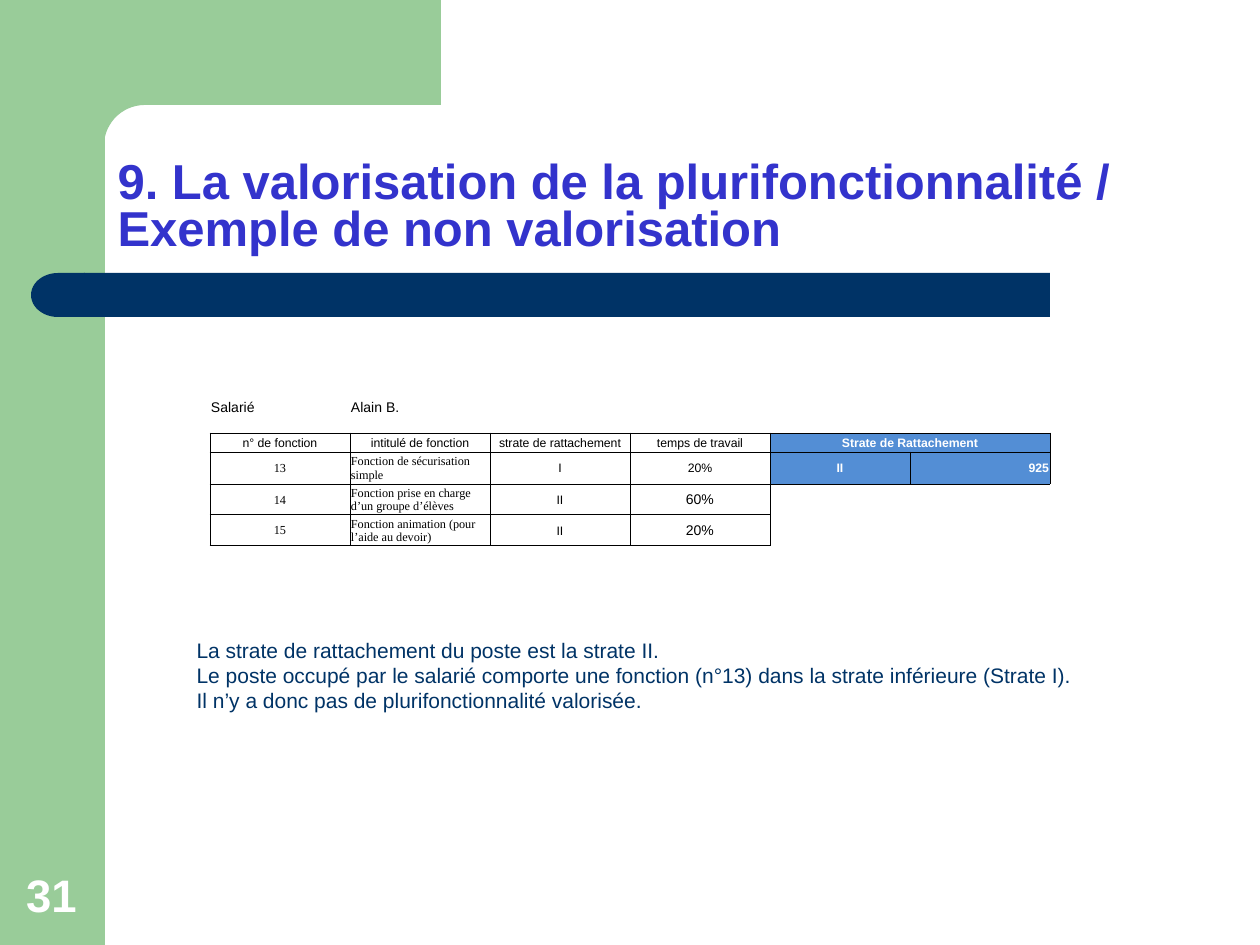
import math
from dataclasses import dataclass

from lxml import etree
from pptx import Presentation
from pptx import util as u
from pptx.dml.color import RGBColor
from pptx.enum import shapes, text
from pptx.oxml.ns import qn

COLORS = {
    "green": "99CC99",
    "navy": "003366",
    "title": "3333CC",
    "blue": "538ED5",
    "white": "FFFFFF",
    "black": "000000",
}
SCALE = 914400 / 126
SERIF = "Times New Roman"
NO_STYLE = "{2D5ABB26-0587-4C30-8999-92F81FD0307C}"
LEFT, CENTER, RIGHT = text.PP_ALIGN.LEFT, text.PP_ALIGN.CENTER, text.PP_ALIGN.RIGHT


def px(length: float) -> u.Emu:
    return u.Emu(round(length * SCALE))


def rgb(name: str) -> RGBColor:
    return RGBColor.from_string(COLORS[name])


@dataclass
class Box:
    left: int
    top: int
    width: int
    height: int

    def emu(self) -> list:
        return [px(n) for n in (self.left, self.top, self.width, self.height)]


@dataclass
class Style:
    size: float
    color: str = "black"
    bold: bool = False
    font: str = "Arial"
    align: text.PP_ALIGN = CENTER


@dataclass
class Entry:
    row: int
    column: int
    wording: str
    style: Style
    fill: str = ""
    bordered: bool = True


def format_text(frame, style: Style) -> None:
    for para in frame.paragraphs:
        para.alignment = style.align
        for span in para.runs:
            span.font.name = style.font
            span.font.size = u.Pt(style.size)
            span.font.bold = style.bold
            span.font.color.rgb = rgb(style.color)


def paint(shape, color: str) -> None:
    shape.shadow.inherit = False
    shape.fill.solid()
    shape.fill.fore_color.rgb = rgb(color)
    shape.line.fill.background()


def add_block(page, kind, box: Box, color: str):
    shape = page.shapes.add_shape(kind, *box.emu())
    paint(shape, color)
    return shape


def add_corner(page) -> None:
    center_x, center_y, radius = 145, 146, 41
    arc = [
        (center_x - radius * math.sin(angle), center_y - radius * math.cos(angle))
        for angle in (math.radians(degrees) for degrees in range(0, 91, 6))
    ]
    outline = [(441, 105), *arc, (105, 161), (63, 161), (63, 0)]
    builder = page.shapes.build_freeform(px(441), 0)
    builder.add_line_segments([(px(x), px(y)) for x, y in outline], close=True)
    paint(builder.convert_to_shape(), "green")


def place_text(shape, box: Box, wording: str, style: Style, anchor) -> None:
    shape.left, shape.top, shape.width, shape.height = box.emu()
    frame = shape.text_frame
    frame.text = wording
    frame.word_wrap = True
    frame.auto_size = text.MSO_AUTO_SIZE.NONE
    frame.vertical_anchor = anchor
    format_text(frame, style)


def remove_bullet(para) -> None:
    properties = para._p.get_or_add_pPr()
    properties.set("marL", "0")
    properties.set("indent", "0")
    etree.SubElement(properties, qn("a:buNone"))


def add_borders(cell) -> None:
    properties = cell._tc.get_or_add_tcPr()
    for index, side in enumerate(("lnL", "lnR", "lnT", "lnB")):
        line = etree.Element(qn(f"a:{side}"), w=str(u.Pt(0.5)))
        fill = etree.SubElement(line, qn("a:solidFill"))
        etree.SubElement(fill, qn("a:srgbClr"), val=COLORS["black"])
        properties.insert(index, line)


def table_entries() -> list[Entry]:
    heading = Style(7)
    serif = Style(7, font=SERIF)
    label = Style(7, font=SERIF, align=LEFT)
    strong = Style(7, "white", True)
    name = Style(8, align=LEFT)
    entries = [
        Entry(0, 0, "Salarié", name, bordered=False),
        Entry(0, 1, "Alain B.", name, bordered=False),
        Entry(2, 4, "Strate de Rattachement", strong, "blue"),
        Entry(2, 5, "", strong, "blue"),
        Entry(3, 4, "II", strong, "blue"),
        Entry(3, 5, "925", Style(7, "white", True, align=RIGHT), "blue"),
    ]
    headings = ("n° de fonction", "intitulé de fonction", "strate de rattachement", "temps de travail")
    entries += [Entry(2, column, wording, heading) for column, wording in enumerate(headings)]
    functions = (
        ("13", "Fonction de sécurisation simple", "I", "20%", 7),
        ("14", "Fonction prise en charge d’un groupe d’élèves", "II", "60%", 8),
        ("15", "Fonction animation (pour l’aide au devoir)", "II", "20%", 8),
    )
    for row, (*wordings, size) in enumerate(functions, start=3):
        styles = (serif, label, heading, Style(size))
        for column, (wording, style) in enumerate(zip(wordings, styles)):
            entries.append(Entry(row, column, wording, style))
    return entries


def add_grid(page, box: Box, rows: list[int], columns: int) -> None:
    table = page.shapes.add_table(len(rows), columns, *box.emu()).table
    table.first_row = table.horz_banding = False
    table._tbl.tblPr.find(qn("a:tableStyleId")).text = NO_STYLE
    for row, height in zip(table.rows, rows):
        row.height = px(height)
    for cell in table.iter_cells():
        cell.margin_left = cell.margin_right = cell.margin_top = px(1)
        cell.margin_bottom = 0
        cell.fill.background()
    table.cell(2, 4).merge(table.cell(2, 5))
    for entry in table_entries():
        cell = table.cell(entry.row, entry.column)
        cell.text_frame.text = entry.wording
        cell.vertical_anchor = text.MSO_ANCHOR.MIDDLE if entry.bordered else text.MSO_ANCHOR.BOTTOM
        format_text(cell.text_frame, entry.style)
        if entry.bordered:
            add_borders(cell)
        if entry.fill:
            cell.fill.solid()
            cell.fill.fore_color.rgb = rgb(entry.fill)
    for cell in table.iter_cells():
        if not cell.text_frame.text:
            para = cell.text_frame.paragraphs[0]
            etree.SubElement(para._p, qn("a:endParaRPr"), sz="700")


def main() -> None:
    deck = Presentation()
    deck.slide_width, deck.slide_height = px(1260), px(945)
    page = deck.slides.add_slide(deck.slide_layouts[1])
    title, body = page.placeholders

    add_block(page, shapes.MSO_SHAPE.RECTANGLE, Box(0, 0, 105, 945), "green")
    add_corner(page)
    add_block(page, shapes.MSO_SHAPE.RECTANGLE, Box(84, 273, 966, 44), "navy")
    cap = add_block(page, shapes.MSO_SHAPE.FLOWCHART_DELAY, Box(31, 273, 54, 44), "navy")
    cap._element.spPr.find(qn("a:xfrm")).set("flipH", "1")

    number_box = Box(11, 861, 81, 67)
    number = page.shapes.add_textbox(*number_box.emu())
    place_text(number, number_box, "31", Style(26, "white", True), text.MSO_ANCHOR.BOTTOM)

    conclusions = (
        "La strate de rattachement du poste est la strate II.",
        "Le poste occupé par le salarié comporte une fonction (n°13) dans la strate inférieure (Strate I).",
        "Il n’y a donc pas de plurifonctionnalité valorisée.",
    )
    place_text(body, Box(184, 631, 973, 90), "\n".join(conclusions),
               Style(12, "navy", align=LEFT), text.MSO_ANCHOR.TOP)
    for para in body.text_frame.paragraphs:
        para.space_before = u.Pt(0)
        remove_bullet(para)

    add_grid(page, Box(210, 398, 840, 148), [18, 17, 19, 32, 31, 31], 6)

    place_text(title, Box(105, 140, 1092, 122),
               "9. La valorisation de la plurifonctionnalité / Exemple de non valorisation",
               Style(28, "title", True, align=LEFT), text.MSO_ANCHOR.BOTTOM)
    title.text_frame.paragraphs[0].line_spacing = 0.8
    deck.save("out.pptx")


if __name__ == "__main__":
    main()
